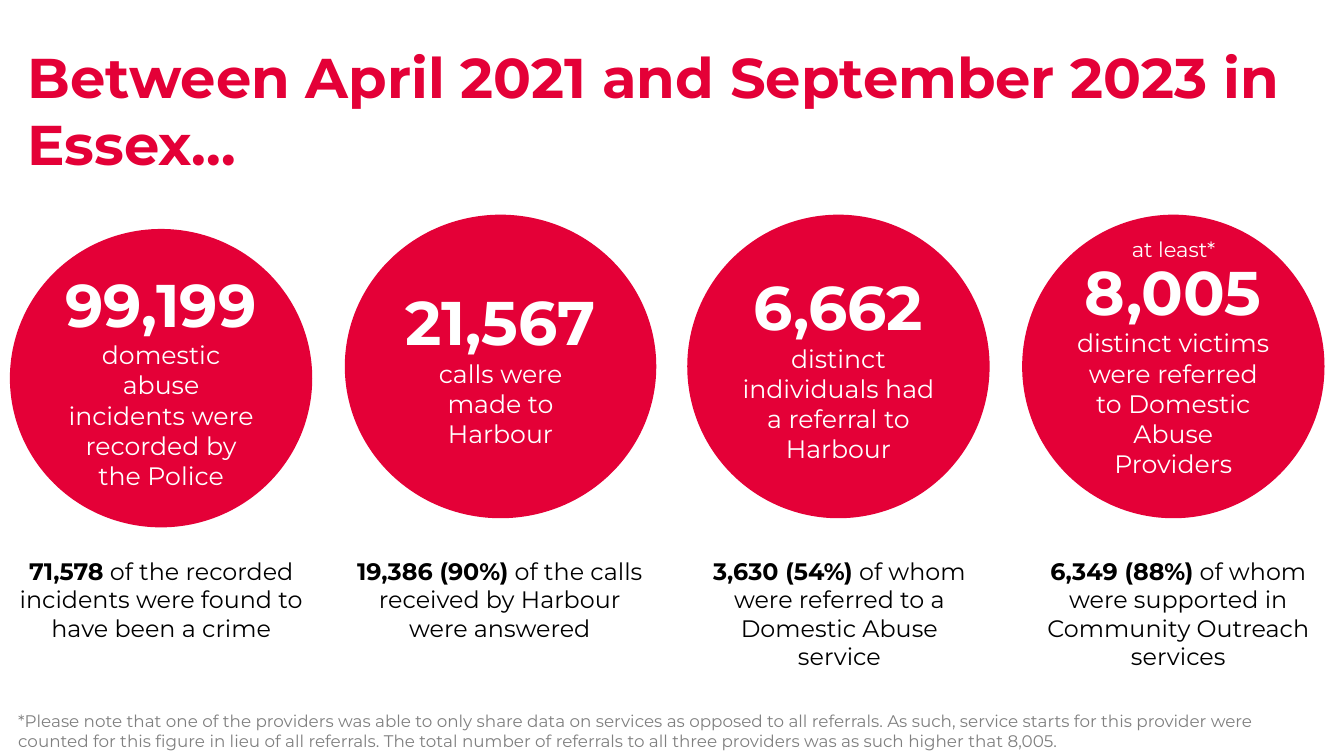
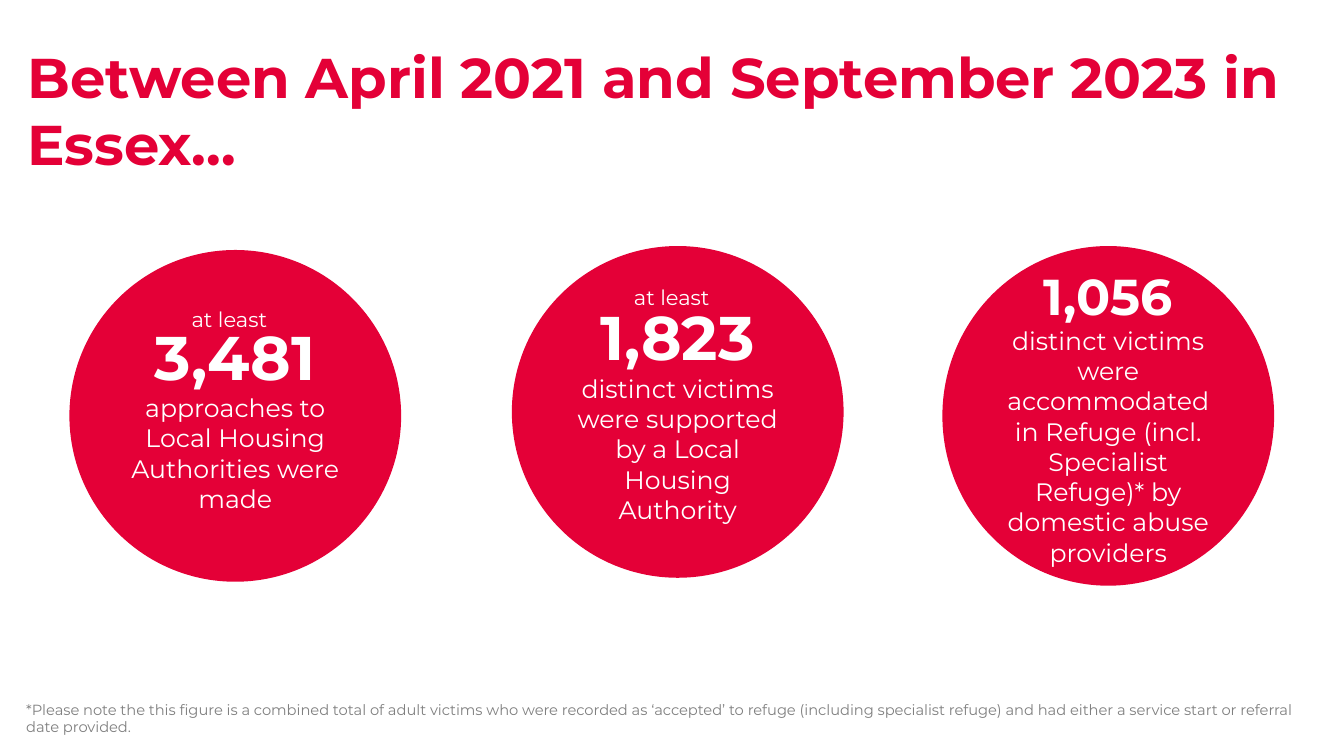
"""Build two slides of key figures shown in red circles."""
from pptx import Presentation
from pptx.dml.color import RGBColor
from pptx.enum.shapes import MSO_SHAPE as Preset
from pptx.enum.text import MSO_ANCHOR as Anchor, PP_ALIGN as Align
from pptx.util import Cm, Pt

COLOURS = {"red": "E40037", "white": "FFFFFF", "black": "000000", "grey": "808080"}
FONT = "Montserrat"
TITLE = "Between April 2021 and September 2023 in Essex…"


class Deck:
    def __init__(self):
        self.presentation = Presentation()
        self.presentation.slide_width = Cm(33.87)
        self.presentation.slide_height = Cm(19.05)
        self.slide = None

    def colour(self, name):
        return RGBColor.from_string(COLOURS[name])

    def new_slide(self):
        layout = self.presentation.slide_layouts[6]
        self.slide = self.presentation.slides.add_slide(layout)
        self.text((0.69, 1.07, 32.49, 2.95), [(TITLE, 40, True)], "red", Align.LEFT)

    def add_runs(self, paragraph, runs, colour, align):
        paragraph.alignment = align
        for words, size, bold in runs:
            run = paragraph.add_run()
            run.text = words
            run.font.name = FONT
            run.font.size = Pt(size)
            run.font.bold = bold
            run.font.color.rgb = self.colour(colour)

    def text(self, box, runs, colour, align=Align.CENTER):
        frame = self.slide.shapes.add_textbox(*map(Cm, box)).text_frame
        frame.word_wrap = True
        frame.margin_left = frame.margin_top = 0
        frame.margin_right = frame.margin_bottom = 0
        self.add_runs(frame.paragraphs[0], runs, colour, align)

    def circle(self, box, *paragraphs):
        shape = self.slide.shapes.add_shape(Preset.OVAL, *map(Cm, box))
        shape.shadow.inherit = False
        shape.fill.solid()
        shape.fill.fore_color.rgb = self.colour("red")
        shape.line.fill.background()
        frame = shape.text_frame
        frame.word_wrap = True
        frame.vertical_anchor = Anchor.MIDDLE
        for index, runs in enumerate(paragraphs):
            paragraph = frame.add_paragraph() if index else frame.paragraphs[0]
            self.add_runs(paragraph, runs, "white", Align.CENTER)

    def figure(self, box, number, words, size=44):
        self.circle(box, [(number, size, True)], [(words, 18, False)])

    def caption(self, left, lead, rest):
        runs = [(lead, 17, True), (rest, 17, False)]
        self.text((left, 14.02, 7.21, 3.45), runs, "black")

    def qualifier(self, box, words):
        self.text(box, [(words, 15, False)], "white")

    def footnote(self, box, words, size):
        self.text(box, [(words, size, False)], "grey", Align.LEFT)


def add_referrals(deck):
    deck.new_slide()
    deck.circle((0.25, 5.77, 7.62, 7.52), [
        ("99,199", 43, True), (" ", 44, False),
        ("domestic abuse incidents were recorded by the Police", 18, False)])
    deck.figure((8.69, 5.41, 7.85, 7.65), "21,567", "calls were made to Harbour")
    deck.figure((17.32, 5.41, 7.62, 7.65), "6,662",
                "distinct individuals had a referral to Harbour")
    deck.circle((25.76, 5.41, 7.62, 7.65), [
        ("8,005 ", 44, True),
        ("distinct victims were referred to Domestic Abuse Providers", 18, False)])
    deck.qualifier((28.42, 5.97, 2.31, 0.66), "at least*")
    captions = [
        (0.46, "71,578", " of the recorded incidents were found to have been a crime"),
        (8.99, "19,386 (90%)", " of the calls received by Harbour were answered"),
        (17.55, "3,630 (54%)", " of whom were referred to a Domestic Abuse service"),
        (26.09, "6,349 (88%)",
         " of whom were supported in Community Outreach services"),
    ]
    for left, lead, rest in captions:
        deck.caption(left, lead, rest)
    deck.footnote(
        (0.46, 17.91, 32.82, 0.94),
        "*Please note that one of the providers was able to only share data on "
        "services as opposed to all referrals. As such, service starts for this "
        "provider were counted for this figure in lieu of all referrals. The total "
        "number of referrals to all three providers was as such higher that 8,005.",
        12)


def add_housing(deck):
    deck.new_slide()
    deck.figure((1.75, 6.3, 8.36, 8.36), "3,481",
                "approaches to Local Housing Authorities were made")
    deck.figure((12.9, 6.2, 8.36, 8.36), "1,823",
                "distinct victims were supported by a Local Housing Authority")
    deck.figure((23.75, 6.2, 8.36, 8.56), "1,056",
                "distinct victims were accommodated in Refuge (incl. Specialist "
                "Refuge)* by domestic abuse providers", 36)
    for left, top in ((3.61, 7.72), (14.76, 7.16)):
        deck.qualifier((left, top, 4.34, 1.12), "at least")
    deck.footnote(
        (0.66, 17.65, 32.23, 0.94),
        "*Please note the this figure is a combined total of adult victims who were "
        "recorded as ‘accepted’ to refuge (including specialist refuge) and had "
        "either a service start or referral date provided.",
        10.5)


def main():
    deck = Deck()
    add_referrals(deck)
    add_housing(deck)
    deck.presentation.save("out.pptx")


if __name__ == "__main__":
    main()
